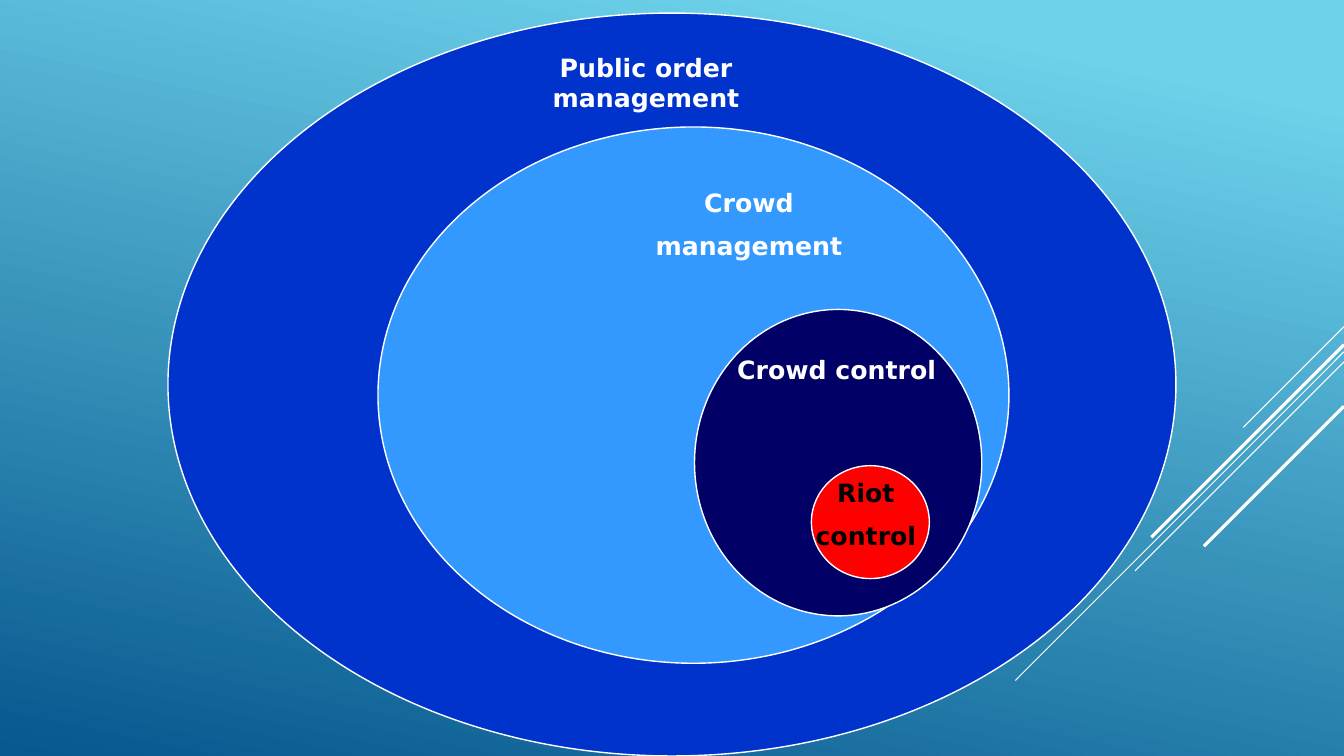
import pptx
import pptx.util
import pptx.dml.color
import pptx.enum.shapes
import pptx.enum.text
import lxml.etree

CELL = pptx.util.Inches(40 / 3) // 40
COLS, ROWS = 40, 22.5


def tint(code):
    return pptx.dml.color.RGBColor.from_string(code)


class Deck:
    """Draws styled elements on one slide, measured in grid columns and rows."""

    def __init__(self, show):
        self.white = "FFFFFF"
        self.font = {"name": "DejaVu Sans", "size": pptx.util.Pt(18), "bold": True}
        show.slide_width, show.slide_height = self.span(COLS, ROWS)
        self.slide = show.slides.add_slide(show.slide_layouts[6])

    def span(self, *units):
        return [pptx.util.Emu(round(unit * CELL)) for unit in units]

    def back(self, angle, stops):
        fill = self.slide.background.fill
        fill.gradient()
        fill.gradient_angle = angle
        for stop, (place, code) in zip(fill.gradient_stops, stops):
            stop.position = place
            stop.color.rgb = tint(code)

    def edge(self, line, width):
        line.color.rgb = tint(self.white)
        line.width = pptx.util.Pt(width)

    def streak(self, top, run, width):
        ends = self.span(COLS, top, COLS - run, top + run)
        kind = pptx.enum.shapes.MSO_CONNECTOR.STRAIGHT
        line = self.slide.shapes.add_connector(kind, *ends)
        self.edge(line.line, width)
        space = pptx.oxml.ns.qn("a:effectLst")
        lxml.etree.SubElement(line._element.spPr, space)

    def oval(self, box, code):
        kind = pptx.enum.shapes.MSO_SHAPE.OVAL
        shape = self.slide.shapes.add_shape(kind, *self.span(*box))
        shape.shadow.inherit = False
        shape.fill.solid()
        shape.fill.fore_color.rgb = tint(code)
        self.edge(shape.line, 1)

    def label(self, box, lines, code):
        frame = self.slide.shapes.add_textbox(*self.span(*box)).text_frame
        frame.word_wrap = True
        frame.auto_size = pptx.enum.text.MSO_AUTO_SIZE.SHAPE_TO_FIT_TEXT
        frame.text = "\n".join(lines)
        for rank, para in enumerate(frame.paragraphs):
            para.alignment = pptx.enum.text.PP_ALIGN.CENTER
            para.space_before = pptx.util.Pt(9 if rank else 0)
            for run in para.runs:
                for key, value in self.font.items():
                    setattr(run.font, key, value)
                run.font.color.rgb = tint(code)


def main():
    show = pptx.Presentation()
    deck = Deck(show)
    deck.back(258, [(0.1, "6ED2EB"), (1, "06588E")])

    streaks = [(9.72, 3, 0.75), (10.47, 9.78, 0.75), (10.77, 6.22, 0.75),
               (10.26, 5.73, 2.25), (12.09, 4.17, 2.25)]
    for streak in streaks:
        deck.streak(*streak)

    ovals = [
        ((5, 0.39, 30, 22.11), "0033CC"),
        ((11.25, 3.78, 18.78, 15.96), "3399FF"),
        ((20.67, 9.21, 8.55, 9.12), "000066"),
        ((24.15, 13.86, 3.51, 3.36), "FF0000"),
    ]
    for box, code in ovals:
        deck.oval(box, code)

    wide = 7.2
    labels = [
        ((15.63, 1.41, wide, 2.1), ["Public order management"], deck.white),
        ((18.69, 5.43, wide, 2.55), ["Crowd", "management"], deck.white),
        ((21.3, 10.41, wide, 1.2), ["Crowd control"], deck.white),
        ((22.17, 14.07, wide, 2.55), ["Riot", "control"], "000000"),
    ]
    for box, lines, code in labels:
        deck.label(box, lines, code)

    show.save("out.pptx")


if __name__ == "__main__":
    main()
